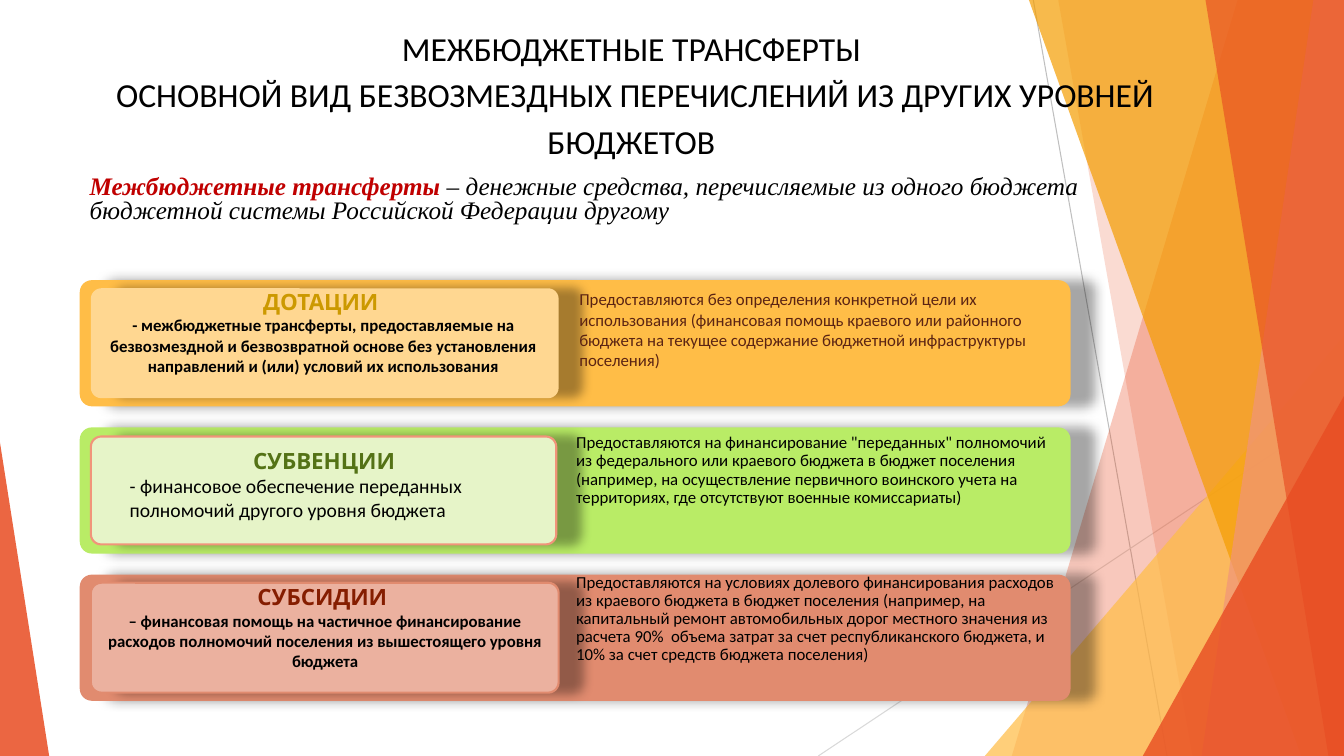
from lxml.etree import SubElement
from pptx import Presentation
from pptx.dml.color import RGBColor
from pptx.enum.shapes import MSO_CONNECTOR as LINE, MSO_SHAPE as SHAPE
from pptx.enum.text import PP_ALIGN as ALIGN
from pptx.oxml.ns import qn
from pptx.util import Cm, Pt

W, H = 33.87, 19.05

# Content (lengths in cm)
TITLE = ["МЕЖБЮДЖЕТНЫЕ ТРАНСФЕРТЫ",
         " ОСНОВНОЙ ВИД БЕЗВОЗМЕЗДНЫХ ПЕРЕЧИСЛЕНИЙ ИЗ ДРУГИХ УРОВНЕЙ БЮДЖЕТОВ"]
TERM = "Межбюджетные трансферты "
DEFINITION = ("– денежные средства, перечисляемые из одного бюджета "
              "бюджетной системы Российской Федерации другому")

BANDS = [
    dict(fill="FFBD47", card="FFD791", border=None, card_size=(11.79, 2.77),
         name="ДОТАЦИИ ", name_color="CC9900", name_box=(2.29, 0.08, 11.73, 3.0),
         body="- межбюджетные трансферты, предоставляемые на безвозмездной и "
              "безвозвратной основе без установления направлений и (или) условий "
              "их использования",
         body_format=dict(size=12, bold=True, align=ALIGN.CENTER),
         note="Предоставляются без определения конкретной цели их использования "
              "(финансовая помощь краевого или районного бюджета на текущее "
              "содержание бюджетной инфраструктуры поселения)",
         note_box=(14.35, 0.1, 12.4, 2.31), note_format=dict(color="5B2413")),
    dict(fill="B9EC66", card="E6F4C8", border="F1947A", card_size=(11.73, 2.72),
         name="СУБВЕНЦИИ", name_color="547216", name_box=(3.02, 0.38, 10.29, 2.13),
         body="- финансовое обеспечение переданных полномочий другого уровня бюджета",
         body_format=dict(size=14),
         note="Предоставляются на финансирование \"переданных\" полномочий из "
              "федерального или краевого бюджета в бюджет поселения (например, на "
              "осуществление первичного воинского учета на территориях, где "
              "отсутствуют военные комиссариаты)",
         note_box=(14.27, 0.05, 12.4, 2.57), note_format=dict(spacing=0.9)),
    dict(fill="E18B6F", card="EBB19F", border="E18B6F", card_size=(11.79, 2.77),
         name="СУБСИДИИ ", name_color="851D00", name_box=(2.29, 0.1, 11.81, 2.49),
         body="– финансовая помощь на частичное финансирование расходов полномочий "
              "поселения из вышестоящего уровня бюджета",
         body_format=dict(size=12, bold=True, align=ALIGN.CENTER),
         note="Предоставляются на условиях долевого финансирования расходов из "
              "краевого бюджета в бюджет поселения (например, на капитальный ремонт "
              "автомобильных дорог местного значения из расчета 90%  объема затрат "
              "за счет республиканского бюджета, и 10% за счет средств бюджета "
              "поселения)",
         note_box=(14.27, -0.15, 12.67, 3.02), note_format=dict(spacing=0.9)),
]
BAND_LEFT, BAND_TOP, BAND_W, BAND_H, BAND_STEP = 2.01, 7.06, 24.97, 3.18, 3.71
CARD_LEFT = 2.29

RAYS = [(26.04, 0, 29.41, H, "BFBFBF"), (W, 10.24, 20.62, H, "D9D9D9")]
# Facets run to the right edge: (top x, bottom x, colour, opacity %)
# Wedges are right triangles: (left, top, apex position, colour, opacity %, width)
FACETS = [
    ("facet", 31.19, 25.5, "E84C22", 30),
    ("facet", 26.67, 30.05, "E84C22", 20),
    ("wedge", 24.82, 8.46, "FFBD47", 72, 1, W - 24.82),
    ("facet", 25.93, 32.79, "F49D00", 70),
    ("facet", 33.1, 30.28, "F1947A", 70),
    ("facet", 30.38, 33.48, "E84C22", 65),
    ("wedge", 28.8, 9.98, "E84C22", 80, 1, W - 28.8),
    ("wedge", 0, 11.15, "E84C22", 85, 0, 1.24),
]


def rgb(code):
    return RGBColor.from_string(code)


def paint(s, color, opacity=100, border=None):
    s.shadow.inherit = False
    s.fill.solid()
    s.fill.fore_color.rgb = rgb(color)
    if opacity < 100:
        clr = s.element.spPr.find(qn("a:solidFill"))[0]
        SubElement(clr, qn("a:alpha"), val=str(opacity * 1000))
    if border:
        s.line.color.rgb = rgb(border)
        s.line.width = Pt(1.5)
    else:
        s.line.fill.background()


def panel(x, y, w, h, color, border=None):
    s = shapes.add_shape(SHAPE.ROUNDED_RECTANGLE, Cm(x), Cm(y), Cm(w), Cm(h))
    s.adjustments[0] = 0.096
    paint(s, color, border=border)
    # Soft shadow to the right
    effects = s.element.spPr.find(qn("a:effectLst"))
    shadow = SubElement(effects, qn("a:outerShdw"), blurRad=str(Pt(8)),
                        dist=str(Pt(17)), dir=str(359 * 60000), rotWithShape="0")
    clr = SubElement(shadow, qn("a:srgbClr"), val="000000")
    SubElement(clr, qn("a:alpha"), val="34000")


def text_box(x, y, w, h):
    tf = shapes.add_textbox(Cm(x), Cm(y), Cm(w), Cm(h)).text_frame
    tf.word_wrap = True
    return tf


def write(tf, text, size=12, font="Calibri", color="000000", bold=False, italic=False,
          align=ALIGN.LEFT, spacing=None, indent=0, same_line=False):
    p = tf.paragraphs[-1]
    if p.runs and not same_line:
        p = tf.add_paragraph()
    p.alignment = align
    if spacing:
        p.line_spacing = spacing
    if indent:
        p._p.get_or_add_pPr().set("marL", str(Cm(indent)))
    r = p.add_run()
    r.text = text
    f = r.font
    f.size, f.name, f.bold, f.italic = Pt(size), font, bold, italic
    f.color.rgb = rgb(color)


prs = Presentation()
prs.slide_width, prs.slide_height = Cm(W), Cm(H)
shapes = prs.slides.add_slide(prs.slide_layouts[6]).shapes

# Background rays and facets
for x1, y1, x2, y2, color in RAYS:
    s = shapes.add_connector(LINE.STRAIGHT, Cm(x1), Cm(y1), Cm(x2), Cm(y2))
    s.line.color.rgb = rgb(color)
    s.line.width = Pt(0.75)
    SubElement(s._element.spPr, qn("a:effectLst"))

for kind, a, b, color, opacity, *wedge in FACETS:
    if kind == "facet":
        corners = [(W, 0), (W, H), (b, H)]
        fb = shapes.build_freeform(Cm(a), 0)
        fb.add_line_segments([(Cm(x), Cm(y)) for x, y in corners], close=True)
        s = fb.convert_to_shape()
    else:
        apex, width = wedge
        s = shapes.add_shape(SHAPE.ISOSCELES_TRIANGLE, Cm(a), Cm(b), Cm(width), Cm(H - b))
        s.adjustments[0] = apex
    paint(s, color, opacity)

# Title and definition
tf = text_box(0.43, 0.43, 29.69, 2.49)
for line in TITLE:
    write(tf, line, size=24, align=ALIGN.CENTER, spacing=1.15, indent=1.27)

tf = text_box(0.74, 4.32, 28.73, 1.5)
definition = dict(size=18, font="Times New Roman", italic=True, spacing=0.8, indent=1.27)
write(tf, TERM, color="C00000", bold=True, **definition)
write(tf, DEFINITION, same_line=True, **definition)

# Transfer bands, each with a card and a note
for i, band in enumerate(BANDS):
    top = BAND_TOP + i * BAND_STEP
    card_w, card_h = band["card_size"]
    panel(BAND_LEFT, top, BAND_W, BAND_H, band["fill"])
    panel(CARD_LEFT, top + (BAND_H - card_h) / 2, card_w, card_h, band["card"], band["border"])

    x, dy, w, h = band["note_box"]
    write(text_box(x, top + dy, w, h), band["note"], **band["note_format"])

    x, dy, w, h = band["name_box"]
    tf = text_box(x, top + dy, w, h)
    write(tf, band["name"], size=16, font="Karla", color=band["name_color"],
          bold=True, align=ALIGN.CENTER)
    write(tf, band["body"], **band["body_format"])

prs.save("out.pptx")
